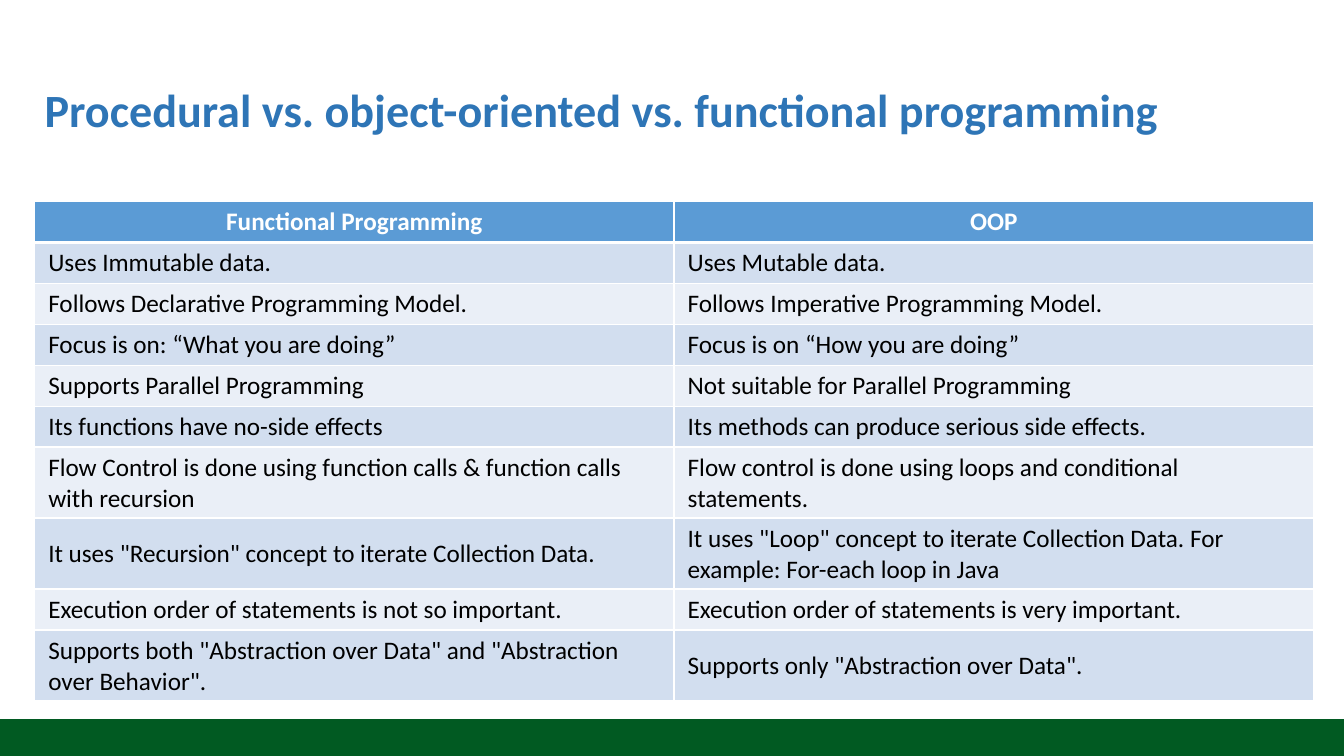
from lxml.etree import SubElement
from pptx import Presentation
from pptx.dml.color import RGBColor
from pptx.enum.shapes import MSO_SHAPE
from pptx.enum.text import MSO_ANCHOR, PP_ALIGN
from pptx.oxml.ns import qn
from pptx.util import Emu, Pt

EMU_PER_PX = 9525
SLIDE_WIDTH, SLIDE_HEIGHT = 1280, 720
MARGIN = 33
COLUMN_WIDTH, ROW_HEIGHT = 609, 39
BAR_HEIGHT = 35

WHITE = "FFFFFF"
HEADER_FILL = "5B9BD5"
BAND_FILLS = ("D2DEEF", "EAEFF7")

COMPARISON = [
    ("Functional Programming", "OOP"),
    ("Uses Immutable data.", "Uses Mutable data."),
    ("Follows Declarative Programming Model.",
     "Follows Imperative Programming Model."),
    ("Focus is on: “What you are doing”", "Focus is on “How you are doing”"),
    ("Supports Parallel Programming", "Not suitable for Parallel Programming"),
    ("Its functions have no-side effects",
     "Its methods can produce serious side effects."),
    ("Flow Control is done using function calls & function calls with recursion",
     "Flow control is done using loops and conditional statements."),
    ('It uses "Recursion" concept to iterate Collection Data.',
     'It uses "Loop" concept to iterate Collection Data. '
     "For example: For-each loop in Java"),
    ("Execution order of statements is not so important.",
     "Execution order of statements is very important."),
    ('Supports both "Abstraction over Data" and "Abstraction over Behavior".',
     'Supports only "Abstraction over Data".'),
]


def px(length):
    return Emu(length * EMU_PER_PX)


def box(left, top, width, height):
    return px(left), px(top), px(width), px(height)


def paint(target, color):
    target.fill.solid()
    target.fill.fore_color.rgb = RGBColor.from_string(color)


def write(frame, text, size=18, color="000000", bold=False,
          align=PP_ALIGN.LEFT, line_spacing=None):
    paragraph = frame.paragraphs[0]
    paragraph.alignment = align
    paragraph.line_spacing = line_spacing
    run = paragraph.add_run()
    run.text = text
    run.font.name = "Calibri"
    run.font.size = Pt(size)
    run.font.bold = bold
    run.font.color.rgb = RGBColor.from_string(color)


def add_borders(cell, **widths):
    """Draw white cell borders; must run before the cell is filled."""
    properties = cell._tc.get_or_add_tcPr()
    for side in "LRTB":
        line = SubElement(properties, qn(f"a:ln{side}"),
                          w=str(Pt(widths.get(side, 1))))
        fill = SubElement(line, qn("a:solidFill"))
        SubElement(fill, qn("a:srgbClr"), val=WHITE)


def add_bottom_bar(slide):
    bar = slide.shapes.add_shape(
        MSO_SHAPE.RECTANGLE,
        *box(0, SLIDE_HEIGHT - BAR_HEIGHT, SLIDE_WIDTH, BAR_HEIGHT))
    bar.shadow.inherit = False
    bar.line.fill.background()
    paint(bar, "015A22")


def add_title(slide, text):
    title = slide.shapes.add_textbox(*box(MARGIN, 38, 2 * COLUMN_WIDTH, 139))
    frame = title.text_frame
    frame.word_wrap = True
    frame.vertical_anchor = MSO_ANCHOR.MIDDLE
    write(frame, text, size=33, color="2E75B6", bold=True, line_spacing=0.9)


def format_cell(cell, text, row):
    cell.vertical_anchor = MSO_ANCHOR.MIDDLE
    cell.margin_left = cell.margin_right = px(13)
    cell.margin_top = cell.margin_bottom = px(5)
    if row == 0:
        add_borders(cell, B=3)
        paint(cell, HEADER_FILL)
        write(cell.text_frame, text, color=WHITE, bold=True,
              align=PP_ALIGN.CENTER)
    else:
        add_borders(cell, T=3 if row == 1 else 1)
        paint(cell, BAND_FILLS[(row - 1) % 2])
        write(cell.text_frame, text)


def add_comparison(slide, rows):
    columns = len(rows[0])
    table = slide.shapes.add_table(
        len(rows), columns,
        *box(MARGIN, 192, columns * COLUMN_WIDTH, len(rows) * ROW_HEIGHT)).table
    for row, texts in enumerate(rows):
        for column, text in enumerate(texts):
            format_cell(table.cell(row, column), text, row)


def main():
    presentation = Presentation()
    presentation.slide_width = px(SLIDE_WIDTH)
    presentation.slide_height = px(SLIDE_HEIGHT)
    slide = presentation.slides.add_slide(presentation.slide_layouts[6])
    add_bottom_bar(slide)
    add_title(slide, "Procedural vs. object-oriented vs. functional programming")
    add_comparison(slide, COMPARISON)
    presentation.save("out.pptx")


if __name__ == "__main__":
    main()
